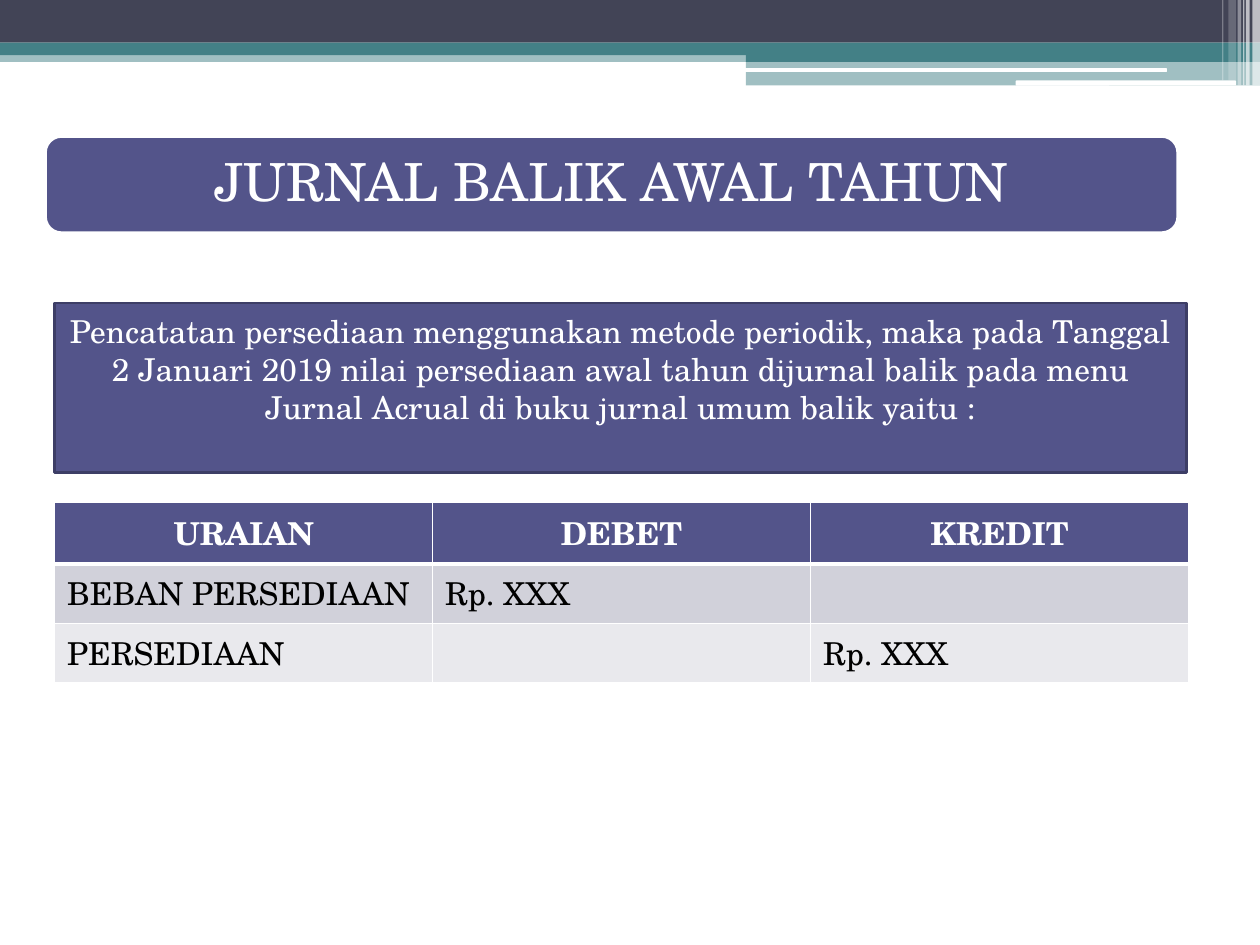
from dataclasses import dataclass

from lxml import etree
from pptx import Presentation
from pptx.dml.color import RGBColor
from pptx.enum.shapes import MSO_SHAPE
from pptx.enum.text import MSO_ANCHOR, PP_ALIGN
from pptx.oxml.ns import qn
from pptx.util import Pt

RECT, ROUNDED = MSO_SHAPE.RECTANGLE, MSO_SHAPE.ROUNDED_RECTANGLE
MIDDLE = MSO_ANCHOR.MIDDLE
CENTER, LEFT = PP_ALIGN.CENTER, PP_ALIGN.LEFT


@dataclass(frozen=True)
class Theme:
    """Colours, font and type sizes of the deck."""
    dark: str = "424456"
    teal: str = "438086"
    indigo: str = "53548A"
    indigo_edge: str = "3D3E66"
    white: str = "FFFFFF"
    black: str = "000000"
    bands: tuple = ("D1D1DA", "E9E9ED")
    font: str = "TeX Gyre Schola"
    title_size: int = 30
    body_size: int = 18


THEME = Theme()


def add_panel(slide, kind, box, color, opacity=100, edge=None):
    """Add a filled shape with optional transparency and outline."""
    panel = slide.shapes.add_shape(kind, *map(Pt, box))
    panel.shadow.inherit = False
    panel.fill.solid()
    panel.fill.fore_color.rgb = RGBColor.from_string(color)
    if opacity < 100:
        color_node = panel.fill._xPr.find(qn("a:solidFill"))[0]
        etree.SubElement(color_node, qn("a:alpha"), val=str(opacity * 1000))
    if edge:
        panel.line.color.rgb = RGBColor.from_string(edge)
        panel.line.width = Pt(1.5)
    else:
        panel.line.fill.background()
    return panel


def write(frame, text, size, color, align=CENTER, bold=False):
    """Fill a text frame with one styled paragraph."""
    frame.text = text
    paragraph = frame.paragraphs[0]
    paragraph.alignment = align
    font = paragraph.runs[0].font if text else paragraph.font
    font.name, font.size, font.bold = THEME.font, Pt(size), bold
    font.color.rgb = RGBColor.from_string(color)
    return paragraph


def add_header(slide, box):
    """Draw the layered bands and the fine stripes along the top edge."""
    left, top, width, height = box
    step_left = 426.2
    step_width = width - step_left
    bands = [
        (RECT, 0, 28.8, width, 6.6, THEME.teal, 50),
        (RECT, 0, 0, width, 24.4, THEME.dark, 100),
        (RECT, 0, 24.4, width, 7.2, THEME.teal, 100),
        (RECT, step_left, 28, step_width, 7.4, THEME.teal, 100),
        (RECT, step_left, 35.2, step_width, 13.6, THEME.teal, 50),
        (ROUNDED, 425.6, 39, 241.2, 2.16, THEME.white, 100),
        (ROUNDED, 580.4, 46, 126, 2.88, THEME.white, 100),
    ]
    tall, short = height, height - 2.9
    stripes = [
        (715.6, 4.4, tall, 65), (712, 2.16, tall, 65),
        (710.4, 0.72, tall, 60), (707.2, 2.16, tall, 40),
        (702, 4.32, short, 20), (698.4, 0.72, short, 30),
    ]
    for kind, x, y, w, h, color, opacity in bands:
        add_panel(slide, kind, (left + x, top + y, w, h), color, opacity)
    for x, w, h, opacity in stripes:
        add_panel(slide, RECT, (left + x, top, w, h), THEME.white, opacity)


def add_title(slide, box):
    """Place the rounded title bar."""
    banner = add_panel(slide, ROUNDED, box, THEME.indigo, edge=THEME.white)
    frame = banner.text_frame
    frame.word_wrap = True
    frame.vertical_anchor = MIDDLE
    frame.margin_left = frame.margin_right = Pt(8.64)
    frame.margin_top = frame.margin_bottom = Pt(8.64)
    heading = write(frame, "JURNAL BALIK AWAL TAHUN", THEME.title_size, THEME.white)
    heading.line_spacing = 0.9


def add_explanation(slide, box):
    """Place the explanation, set slightly above the middle of its panel."""
    panel = add_panel(slide, RECT, box, THEME.indigo, edge=THEME.indigo_edge)
    frame = panel.text_frame
    frame.word_wrap = True
    frame.vertical_anchor = MIDDLE
    frame.margin_bottom = Pt(25.2)
    write(frame, "Pencatatan persediaan menggunakan metode periodik, maka pada "
          "Tanggal 2 Januari 2019 nilai persediaan awal tahun dijurnal balik "
          "pada menu Jurnal Acrual di buku jurnal umum balik yaitu :",
          THEME.body_size, THEME.white)


def add_border(cell, side, width):
    """Draw one white border of a table cell."""
    line = etree.SubElement(cell._tc.get_or_add_tcPr(), qn(f"a:ln{side}"),
                            w=str(Pt(width)))
    fill = etree.SubElement(line, qn("a:solidFill"))
    etree.SubElement(fill, qn("a:srgbClr"), val=THEME.white)


def add_journal(slide, box):
    """Place the reversing entry as a table of debits and credits."""
    entries = [
        ("URAIAN", "DEBET", "KREDIT"),
        ("BEBAN PERSEDIAAN", "Rp. XXX", ""),
        ("PERSEDIAAN", "", "Rp. XXX"),
    ]
    journal = slide.shapes.add_table(len(entries), len(entries[0]), *map(Pt, box)).table
    for row, entry in enumerate(entries):
        is_header = row == 0
        fill = THEME.indigo if is_header else THEME.bands[(row - 1) % 2]
        color = THEME.white if is_header else THEME.black
        for column, text in enumerate(entry):
            cell = journal.cell(row, column)
            for side in "LRTB":
                heavy = (side == "B" and is_header) or (side == "T" and row == 1)
                add_border(cell, side, 3 if heavy else 1)
            cell.fill.solid()
            cell.fill.fore_color.rgb = RGBColor.from_string(fill)
            write(cell.text_frame, text, THEME.body_size, color,
                  CENTER if is_header else LEFT, is_header)


def main():
    """Build the slide and save it."""
    deck = Presentation()
    deck.slide_width, deck.slide_height = Pt(720), Pt(540)
    slide = deck.slides.add_slide(deck.slide_layouts[6])
    add_header(slide, (0, 0, 720, 48.8))
    add_title(slide, (26, 78, 647, 55))
    add_journal(slide, (31.2, 287.2, 648, 102))
    add_explanation(slide, (31, 173.2, 647, 96.8))
    deck.save("out.pptx")


if __name__ == "__main__":
    main()
